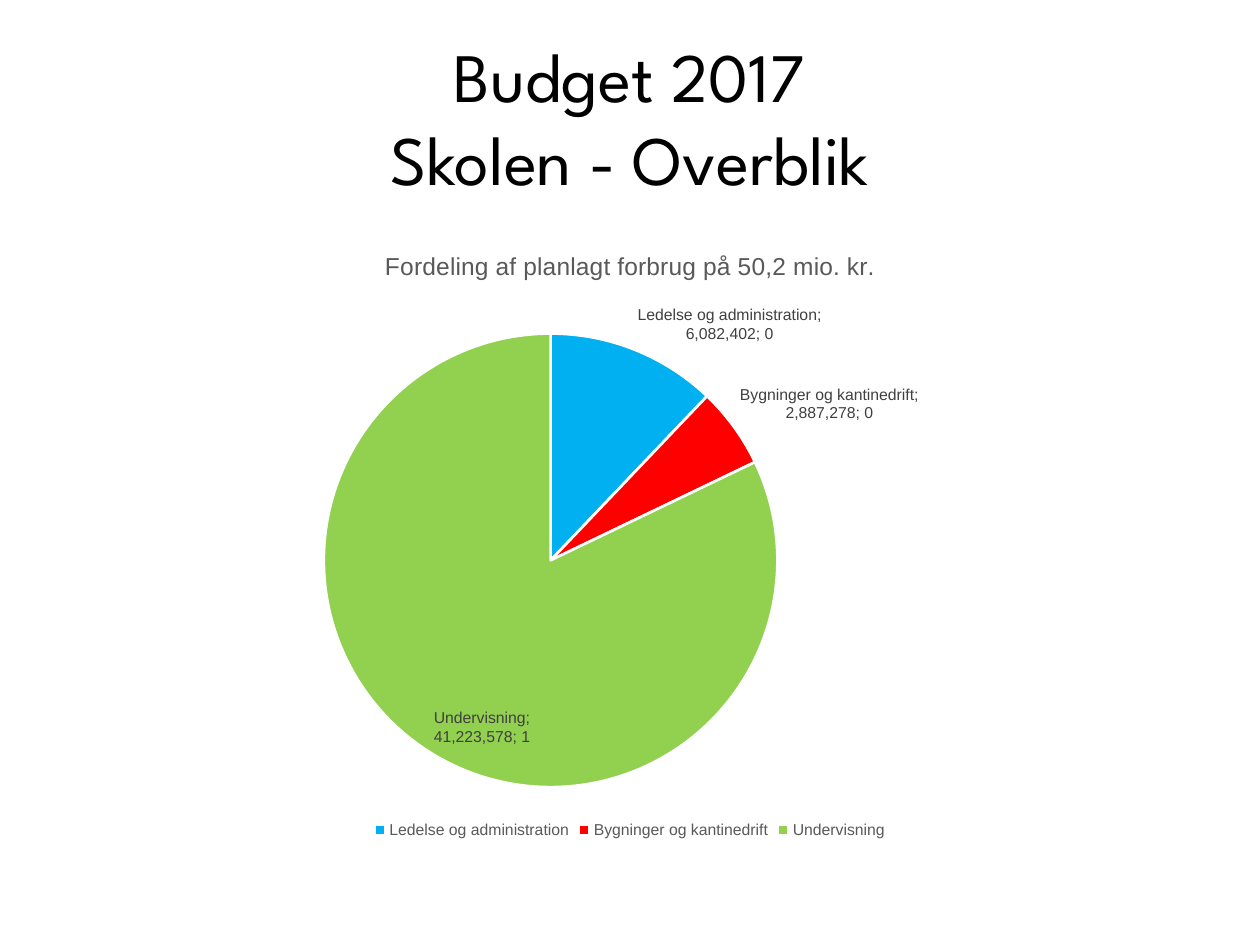
from copy import deepcopy
from dataclasses import dataclass

from lxml import etree
from pptx import Presentation
from pptx import util as u
from pptx.chart.data import CategoryChartData
from pptx.dml.color import RGBColor
from pptx.enum import chart as c
from pptx.enum import text
from pptx.oxml import parse_xml
from pptx.oxml.ns import nsdecls, qn


@dataclass(frozen=True)
class Theme:
    heading_font: str = "League Spartan"
    body_font: str = "Arial"
    black: str = "000000"
    white: str = "FFFFFF"
    grey: str = "595959"
    dark_grey: str = "404040"
    slices: tuple = ("00B0F0", "FF0000", "92D050")
    heading_size: float = 39.6
    chart_title_size: float = 14
    chart_size: float = 10
    label_size: float = 9


class BudgetSlide:
    """Holds the theme and the slide, and adds each kind of element."""

    def __init__(self, presentation, theme):
        self.theme = theme
        self.slide = presentation.slides.add_slide(presentation.slide_layouts[6])

    def style(self, font, name, size, color):
        font.name = name
        font.size = u.Pt(size)
        font.bold = False
        font.color.rgb = RGBColor.from_string(color)

    def add_heading(self, wording, left, top, width, height):
        box = self.slide.shapes.add_textbox(*map(u.Inches, (left, top, width, height)))
        frame = box.text_frame
        frame.word_wrap = True
        frame.vertical_anchor = text.MSO_ANCHOR.MIDDLE
        paragraph = frame.paragraphs[0]
        paragraph.text = wording
        paragraph.alignment = text.PP_ALIGN.CENTER
        self.style(paragraph.font, self.theme.heading_font,
                   self.theme.heading_size, self.theme.black)

    def add_pie(self, title, values, left, top, width, height):
        theme = self.theme
        data = CategoryChartData(number_format="#,##0")
        data.categories = values.keys()
        data.add_series("Series 1", values.values())
        chart = self.slide.shapes.add_chart(
            c.XL_CHART_TYPE.PIE, *map(u.Inches, (left, top, width, height)), data).chart
        self.style(chart.font, theme.body_font, theme.chart_size, theme.black)

        chart.has_title = True
        paragraph = chart.chart_title.text_frame.paragraphs[0]
        paragraph.text = title
        self.style(paragraph.font, theme.body_font, theme.chart_title_size, theme.grey)
        self.place(chart.chart_title._element.get_or_add_tx(), x=0.28, y=0.04)

        chart.has_legend = True
        chart.legend.position = c.XL_LEGEND_POSITION.BOTTOM
        chart.legend.include_in_layout = False
        self.style(chart.legend.font, theme.body_font, theme.label_size, theme.grey)

        plot = chart.plots[0]
        plot.vary_by_categories = True
        series = plot.series[0]
        for index, color in enumerate(theme.slices):
            pie_slice = series.points[index].format
            pie_slice.fill.solid()
            pie_slice.fill.fore_color.rgb = RGBColor.from_string(color)
            pie_slice.line.color.rgb = RGBColor.from_string(theme.white)
            pie_slice.line.width = u.Pt(1.5)
        self.add_labels(series, inside=len(values) - 1)

        plot_area = chart._chartSpace.chart.plotArea
        for layout in plot_area.findall(qn("c:layout")):
            plot_area.remove(layout)
        anchor = etree.Element(qn("c:anchor"))
        plot_area.insert(0, anchor)
        self.place(anchor, x=0.23, y=0.18, w=0.4, h=0.73)
        plot_area.remove(anchor)

    def place(self, element, **fractions):
        target = '<c:layoutTarget val="inner"/>' if "w" in fractions else ""
        modes = "".join(f'<c:{axis}Mode val="edge"/>' for axis in "xy")
        sizes = "".join(f'<c:{key} val="{value}"/>' for key, value in fractions.items())
        following = element.getnext()
        if following is not None and following.tag == qn("c:layout"):
            following.getparent().remove(following)
        element.addnext(parse_xml(
            f'<c:layout {nsdecls("c")}><c:manualLayout>{target}{modes}{sizes}'
            '</c:manualLayout></c:layout>'))

    def add_labels(self, series, inside):
        labels = series.data_labels
        labels.show_value = labels.show_category_name = labels.show_percentage = True
        labels.number_format = "#,##0"
        labels.number_format_is_linked = False
        labels.position = c.XL_LABEL_POSITION.OUTSIDE_END
        self.style(labels.font, self.theme.body_font,
                   self.theme.label_size, self.theme.dark_grey)
        element = labels._element
        separator = etree.Element(qn("c:separator"))
        separator.text = "; "
        element.find(qn("c:showBubbleSize")).addnext(separator)

        label = etree.Element(qn("c:dLbl"))
        etree.SubElement(label, qn("c:idx")).set("val", str(inside))
        label.extend(deepcopy(child) for child in element
                     if child.tag != qn("c:showLeaderLines"))
        label.find(qn("c:dLblPos")).set("val", "inEnd")
        element.insert(0, label)


def main():
    presentation = Presentation()
    presentation.slide_width = u.Inches(10)
    presentation.slide_height = u.Inches(7.5)
    budget = BudgetSlide(presentation, Theme())
    budget.add_heading("Budget 2017\vSkolen - Overblik", 0.5, 0.3, 9, 1.25)
    budget.add_pie(
        "Fordeling af planlagt forbrug på 50,2 mio. kr.",
        {"Ledelse og administration": 6082402,
         "Bygninger og kantinedrift": 2887278,
         "Undervisning": 41223578},
        0.5, 1.75, 9, 4.95)
    presentation.save("out.pptx")


if __name__ == "__main__":
    main()
